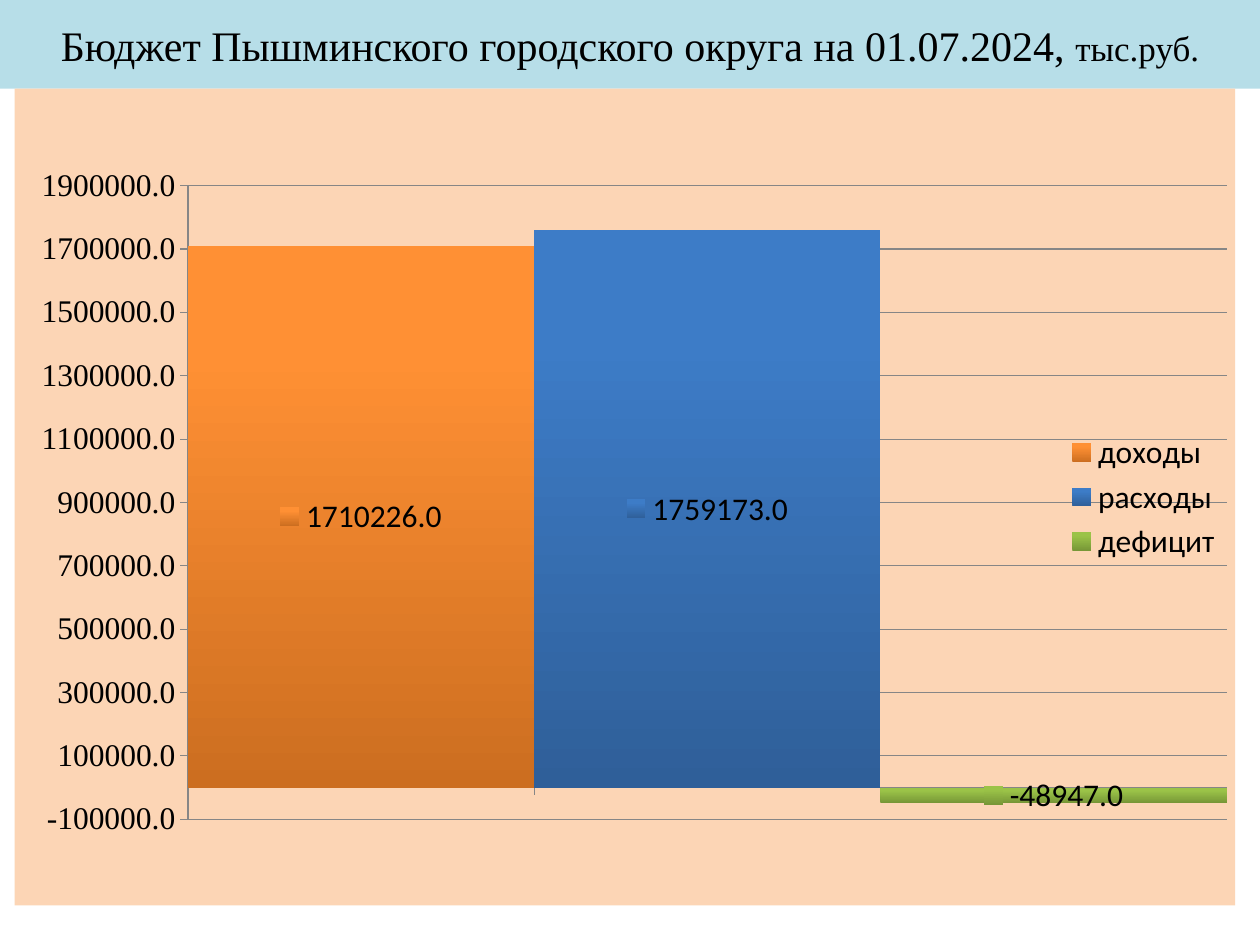
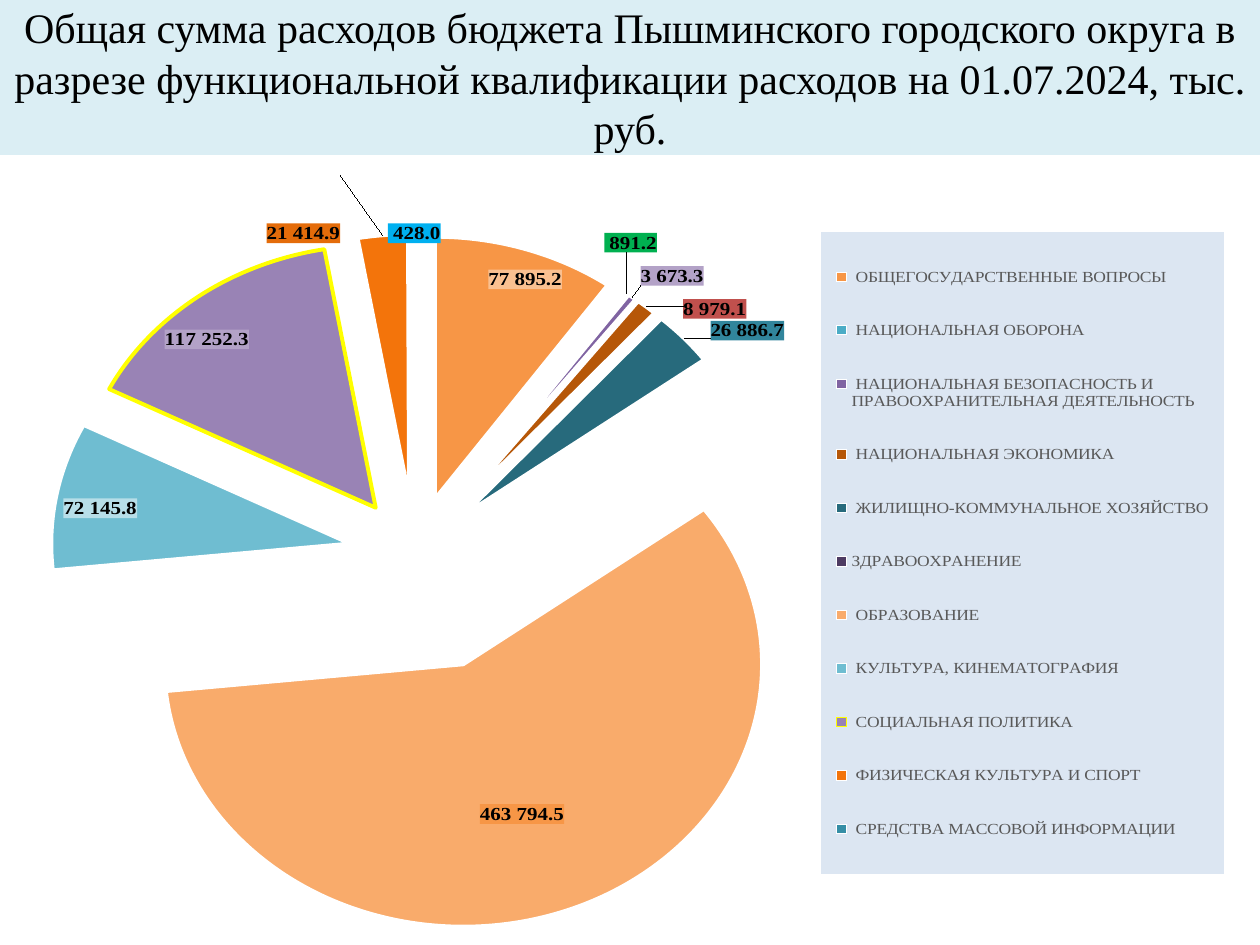
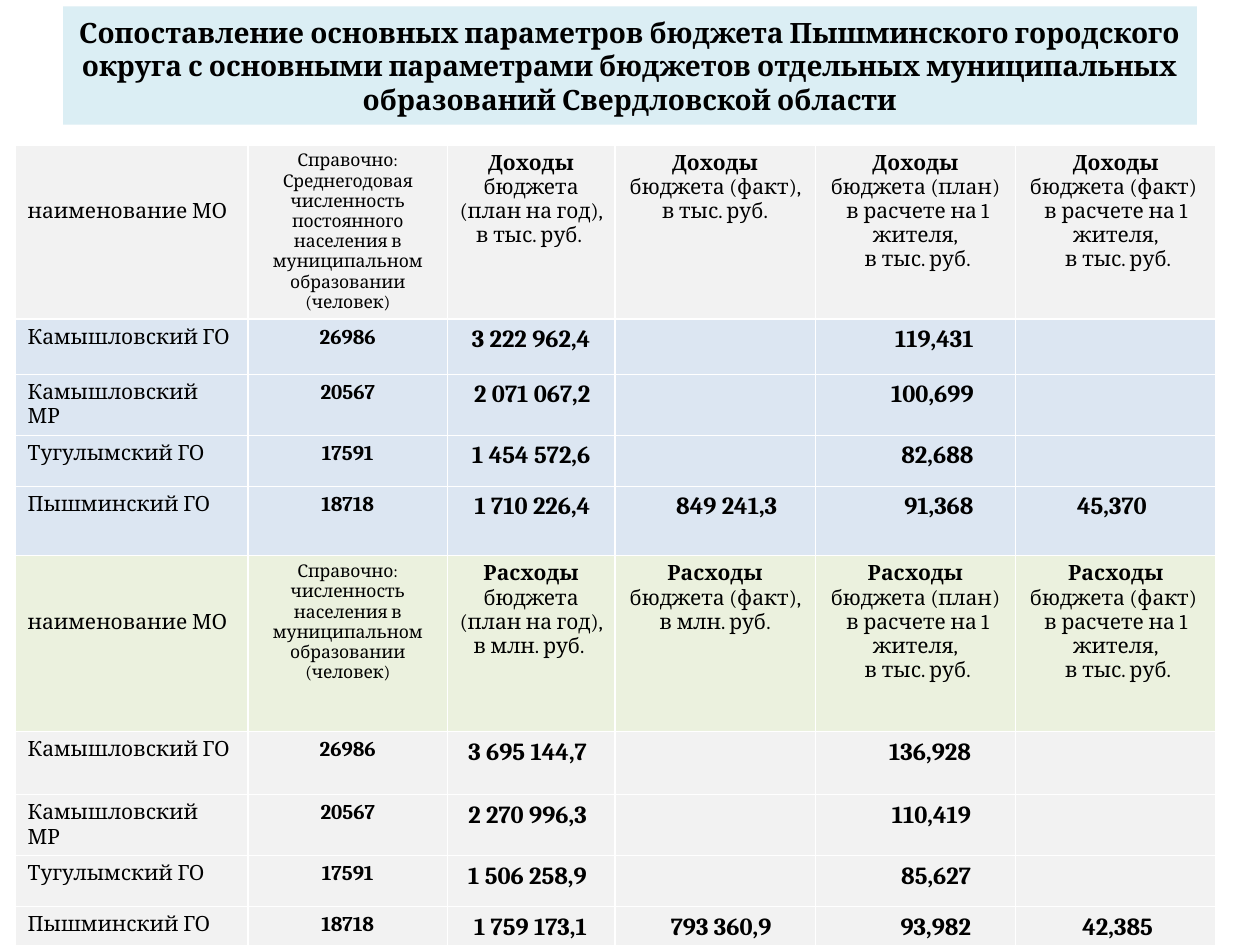
from pptx import Presentation
from pptx.chart.data import CategoryChartData
from pptx.dml.color import RGBColor
from pptx.enum.chart import (XL_CHART_TYPE, XL_LABEL_POSITION, XL_LEGEND_POSITION,
                             XL_TICK_LABEL_POSITION, XL_TICK_MARK)
from pptx.enum.text import MSO_ANCHOR, MSO_AUTO_SIZE, PP_ALIGN
from pptx.oxml import parse_xml
from pptx.oxml.ns import nsdecls
from pptx.util import Pt

COLUMNS, PIE = XL_CHART_TYPE.COLUMN_CLUSTERED, XL_CHART_TYPE.PIE
INSIDE, OUTSIDE = XL_LABEL_POSITION.CENTER, XL_LABEL_POSITION.OUTSIDE_END
CENTER, LEFT, RIGHT = PP_ALIGN.CENTER, PP_ALIGN.LEFT, PP_ALIGN.RIGHT

COLORS = {
    "text": "000000", "legend text": "595959", "axis": "868686", "white": "FFFFFF",
    "strong band": "B7DEE8", "pale band": "DBEEF4", "chart area": "FCD5B5",
    "blue": "DCE6F2", "grey": "F2F2F2", "green": "EBF1DE", "outline": "FFFF00",
}
SERIF, SANS, TABLE_FONT = "Times New Roman", "Calibri", "Cambria"

# Category, value, dark and light end of the column
BUDGET = [
    ("доходы", 1710226, "CC6E20", "FF9034"),
    ("расходы", 1759173, "2F5F99", "3D7CC7"),
    ("дефицит", -48947, "779737", "9BC348"),
]

# Category, value, slice colour, label (colour, position, shift right, shift down)
SPENDING = [
    ("ОБЩЕГОСУДАРСТВЕННЫЕ ВОПРОСЫ", 77895.2, "F79646", ("FAC090", INSIDE, 25.7, -61.7)),
    ("НАЦИОНАЛЬНАЯ ОБОРОНА", 891.2, "4BACC6", ("00B050", OUTSIDE, -15.4, -23.4)),
    ("НАЦИОНАЛЬНАЯ БЕЗОПАСНОСТЬ И ПРАВООХРАНИТЕЛЬНАЯ ДЕЯТЕЛЬНОСТЬ", 3673.3, "8064A2",
     ("B3A2C7", OUTSIDE, 2.3, -4)),
    ("НАЦИОНАЛЬНАЯ ЭКОНОМИКА", 8979.1, "B65708", ("C0504D", OUTSIDE, 18.3, 10.9)),
    ("ЖИЛИЩНО-КОММУНАЛЬНОЕ ХОЗЯЙСТВО", 26886.7, "276A7C", ("31859C", OUTSIDE, 12, 4.3)),
    ("ЗДРАВООХРАНЕНИЕ", 0, "4D3B62", None),
    ("ОБРАЗОВАНИЕ", 463794.5, "F9AB6B", ("F79646", INSIDE, 2.9, 17.7)),
    ("КУЛЬТУРА, КИНЕМАТОГРАФИЯ", 72145.8, "6FBDD1", ("B7DEE8", INSIDE, -58.9, -7.4)),
    ("СОЦИАЛЬНАЯ ПОЛИТИКА", 117252.3, "9983B5", ("B3A2C7", INSIDE, -45.7, -41)),
    ("ФИЗИЧЕСКАЯ КУЛЬТУРА И СПОРТ", 21414.9, "F3740B", ("E46C0A", OUTSIDE, -24, -35)),
    ("СРЕДСТВА МАССОВОЙ ИНФОРМАЦИИ", 428, "358EA6", ("00B0F0", OUTSIDE, 0, 4)),
]
OUTLINED = "СОЦИАЛЬНАЯ ПОЛИТИКА"
EXPLOSION, FAR_EXPLOSIONS = 22, {"ОБРАЗОВАНИЕ": 45}
EM_SPACE = " "

COLUMN_WIDTHS = [133.2, 113.8, 95.8, 114.5, 114.5, 114.5]
ROW_HEIGHTS = [98.8, 31.7, 34.6, 29, 39.5, 100.6, 36, 34.8, 29, 23.2]
# Subject, unit, population note, header fill, body fill, right margins, rows
SECTIONS = [
    ("Доходы", "тыс.", "Среднегодовая численность постоянного населения в муниципальном "
     "образовании (человек)", "grey", "blue", {0: 9.2, 2: 14, 3: 21.7, 4: 24, 5: 39.5}, [
         ("Камышловский ГО", "26986", "3 222 962,4", "", "119,431", ""),
         ("Камышловский МР", "20567", "2 071 067,2", "", "100,699", ""),
         ("Тугулымский ГО", "17591", "1 454 572,6", "", "82,688", ""),
         ("Пышминский ГО", "18718", "1 710 226,4", "849 241,3", "91,368", "45,370")]),
    ("Расходы", "млн.", "численность населения в муниципальном образовании (человек)",
     "green", "grey", {0: 9.2, 2: 16, 3: 25, 4: 25.5, 5: 36}, [
         ("Камышловский ГО", "26986", "3 695 144,7", "", "136,928", ""),
         ("Камышловский МР", "20567", "2 270 996,3", "", "110,419", ""),
         ("Тугулымский ГО", "17591", "1 506 258,9", "", "85,627", ""),
         ("Пышминский ГО", "18718", "1 759 173,1", "793 360,9", "93,982", "42,385")]),
]


def rgb(color):
    return RGBColor.from_string(COLORS.get(color, color))


def paint(fill, color):
    fill.solid()
    fill.fore_color.rgb = rgb(color)


def style_font(font, name, size, color="text", bold=False):
    font.name, font.size, font.bold = name, Pt(size), bold
    font.color.rgb = rgb(color)


def write_spans(para, spans, name, align):
    """Fill a paragraph with (text, size, bold) spans."""
    para.alignment = align
    for text, size, bold in spans:
        span = para.add_run()
        span.text = text
        style_font(span.font, name, size, bold=bold)


# Shared title band
def add_page(deck, box, band, spans, font):
    page = deck.slides.add_slide(deck.slide_layouts[5])
    title = page.shapes.title
    title.left, title.top, title.width, title.height = map(Pt, box)
    paint(title.fill, band)
    frame = title.text_frame
    frame.word_wrap, frame.auto_size = True, MSO_AUTO_SIZE.NONE
    frame.vertical_anchor = MSO_ANCHOR.MIDDLE
    write_spans(frame.paragraphs[0], spans, font, CENTER)
    return page


# Chart parts that need XML
def area_fill(color):
    return parse_xml(f'<c:spPr {nsdecls("c", "a")}><a:solidFill><a:srgbClr '
                     f'val="{COLORS.get(color, color)}"/></a:solidFill>'
                     '<a:ln><a:noFill/></a:ln></c:spPr>')


def explosion(percent):
    return parse_xml(f'<c:explosion {nsdecls("c")} val="{percent}"/>')


def set_layout(holder, index, values, box, inner=False):
    """Place a chart part by a box or a shift in points inside the chart's box."""
    for old in holder.xpath("c:layout"):
        holder.remove(old)
    target = '<c:layoutTarget val="inner"/>' if inner else ""
    modes = '<c:xMode val="edge"/><c:yMode val="edge"/>' if len(values) == 4 else ""
    places = "".join(f'<c:{key} val="{value / size:.4f}"/>'
                     for key, value, size in zip("xywh", values, box[2:] * 2))
    holder.insert(index, parse_xml(f'<c:layout {nsdecls("c")}><c:manualLayout>{target}{modes}'
                                   f'{places}</c:manualLayout></c:layout>'))


def add_chart(page, box, kind, names, values, font_size, plot_box):
    data = CategoryChartData()
    data.categories = names
    data.add_series("Series 1", values)
    chart = page.shapes.add_chart(kind, *map(Pt, box), data).chart
    style_font(chart.font, SANS, font_size)
    chart.has_title = False
    chart.has_legend = True
    chart.legend.position = XL_LEGEND_POSITION.RIGHT
    chart.legend.include_in_layout = False
    chart.plots[0].vary_by_categories = True
    set_layout(chart.element.xpath(".//c:plotArea")[0], 0, plot_box, box, inner=True)
    return chart


def add_budget_chart(page, box):
    names, amounts, *_ = zip(*BUDGET)
    chart = add_chart(page, box, COLUMNS, names, amounts, 18, (99, 55.5, 593.7, 362))
    chart.element.xpath("c:chart")[0].addnext(area_fill("chart area"))
    plot = chart.plots[0]
    plot.gap_width, plot.overlap = 0, 1

    # Axes
    values, categories = chart.value_axis, chart.category_axis
    values.minimum_scale, values.maximum_scale, values.major_unit = -100000, 1900000, 200000
    values.tick_labels.number_format = "0.0"
    values.tick_labels.number_format_is_linked = False
    style_font(values.tick_labels.font, SERIF, 18)
    categories.tick_label_position = XL_TICK_LABEL_POSITION.NONE
    for axis in (values, categories):
        axis.major_tick_mark = XL_TICK_MARK.OUTSIDE
        axis.format.line.color.rgb = rgb("axis")
    values.major_gridlines.format.line.color.rgb = rgb("axis")

    # Columns
    for index, (_, _, dark, light) in enumerate(BUDGET):
        style = plot.series[0].points[index].format
        style.line.fill.background()
        style.fill.gradient()
        style.fill.gradient_angle = 90
        for stop, place, color in zip(style.fill.gradient_stops, (0, 0.8), (dark, light)):
            stop.position, stop.color.rgb = place, rgb(color)

    # Value labels with legend keys
    plot.has_data_labels = True
    labels = plot.data_labels
    labels.show_value = labels.show_legend_key = True
    labels.position = INSIDE
    labels.number_format, labels.number_format_is_linked = "0.0", False


def add_spending_chart(page, box):
    # Labelled categories are indented by one em in the legend
    names = [(EM_SPACE if label else "") + name for name, _, _, label in SPENDING]
    chart = add_chart(page, box, PIE, names, [row[1] for row in SPENDING], 10,
                      (8.5, 6.9, 457.2, 416.8))
    style_font(chart.legend.font, SERIF, 10, "legend text")
    legend = chart.element.xpath(".//c:legend")[0]
    set_layout(legend, 1, (469.2, 5.6, 230.2, 417.7), box)
    legend.xpath("c:txPr")[0].addprevious(area_fill("blue"))

    series = chart.plots[0].series[0]
    series.data_labels.show_value = False
    for index, (name, _, color, label) in enumerate(SPENDING):
        # Slice
        point = series.points[index]
        paint(point.format.fill, color)
        line = point.format.line
        line.color.rgb = rgb("outline" if name == OUTLINED else "white")
        line.width = Pt(2.25)
        slice_node = chart.element.xpath(f'.//c:dPt[c:idx/@val="{index}"]')[0]
        slice_node.xpath("c:spPr")[0].addprevious(
            explosion(FAR_EXPLOSIONS.get(name, EXPLOSION)))
        if label is None:
            continue
        # Label
        label_color, position, *shift = label
        style_font(point.data_label.font, SERIF, 12, bold=True)
        point.data_label.position = position
        label_node = chart.element.xpath(f'.//c:dLbl[c:idx/@val="{index}"]')[0]
        set_layout(label_node, 1, shift, box)
        text_node = label_node.xpath("c:txPr")[0]
        for old in label_node.xpath("c:spPr"):
            label_node.remove(old)
        text_node.addprevious(parse_xml(
            f'<c:numFmt {nsdecls("c")} formatCode="#\\ ##0.0" sourceLinked="0"/>'))
        text_node.addprevious(area_fill(label_color))
    chart.element.xpath(".//c:dPt")[0].addprevious(explosion(EXPLOSION))


# Comparison table
def fill_cell(cell, fill, paras, align):
    paint(cell.fill, fill)
    for side in ("L", "R", "T", "B"):
        border = parse_xml(f'<a:ln{side} {nsdecls("a")} w="12700"><a:solidFill><a:srgbClr '
                           f'val="{COLORS["white"]}"/></a:solidFill></a:ln{side}>')
        cell.fill._xPr.xpath("a:solidFill")[0].addprevious(border)
    frame = cell.text_frame
    for index, spans in enumerate(paras):
        para = frame.add_paragraph() if index else frame.paragraphs[0]
        write_spans(para, spans, TABLE_FONT, align)


def header_texts(subject, unit, note):
    """Paragraphs of the six header cells."""
    money = f"в {unit} руб."
    resident, thousands = "в расчете на 1 жителя,", [(" в тыс. руб.", 12, False)]

    def opening(rest):
        return [(subject, 12, True), (rest, 12, False)]

    return [
        [[("наименование МО", 12, False)]],
        [[("Справочно:", 10, False)], [(note, 10, False)]],
        [opening(f" бюджета (план на год), {money} ")],
        [opening(" бюджета (факт), "), [(money, 12, False)]],
        [opening(" бюджета (план)"), [(" " + resident, 12, False)], thousands],
        [opening(" бюджета (факт) "), [(resident, 12, False)], thousands],
    ]


def add_comparison_table(page, box):
    table = page.shapes.add_table(len(ROW_HEIGHTS), len(COLUMN_WIDTHS), *map(Pt, box)).table
    table.first_row = table.horz_banding = False
    for column, width in zip(table.columns, COLUMN_WIDTHS):
        column.width = Pt(width)
    for row, height in zip(table.rows, ROW_HEIGHTS):
        row.height = Pt(height)

    row_index = 0
    for subject, unit, note, header_fill, body_fill, margins, rows in SECTIONS:
        for index, paras in enumerate(header_texts(subject, unit, note)):
            fill_cell(table.cell(row_index, index), header_fill, paras,
                      CENTER if index else LEFT)
        table.cell(row_index, 0).margin_top = Pt(31.5)
        plan_cell = table.cell(row_index, 2)
        plan_cell.margin_left = plan_cell.margin_right = Pt(6.5)
        for row_index, texts in enumerate(rows, row_index + 1):
            for index, text in enumerate(texts):
                cell = table.cell(row_index, index)
                size = 14 if index > 1 else 12
                align = (LEFT, CENTER)[index] if index < 2 else RIGHT
                fill_cell(cell, body_fill, [[(text, size, index > 0)]] if text else [], align)
                if index in margins:
                    cell.margin_right = Pt(margins[index])
        row_index += 1


def main():
    deck = Presentation()
    deck.slide_width, deck.slide_height = Pt(720), Pt(540)

    page = add_page(deck, (0, 0, 720, 50.7), "strong band", [
        ("Бюджет Пышминского городского округа на 01.07.2024, ", 24, False),
        ("тыс.руб.", 20, False)], SERIF)
    add_budget_chart(page, (8.4, 50.7, 697.5, 466.6))

    page = add_page(deck, (0, 0, 720, 88.56), "pale band", [
        ("Общая сумма расходов бюджета Пышминского городского округа в разрезе "
         "функциональной квалификации расходов на 01.07.2024, тыс. руб.", 24, False)], SERIF)
    add_spending_chart(page, (0, 100, 705.6, 430.56))

    page = add_page(deck, (36, 3.6, 648, 67.68), "pale band", [
        ("Сопоставление основных параметров бюджета Пышминского городского округа с основными "
         "параметрами бюджетов отдельных муниципальных образований Свердловской области",
         16, True)], TABLE_FONT)
    add_comparison_table(page, (8.64, 82.8, 686.3, 457.2))

    deck.save("out.pptx")


if __name__ == "__main__":
    main()
